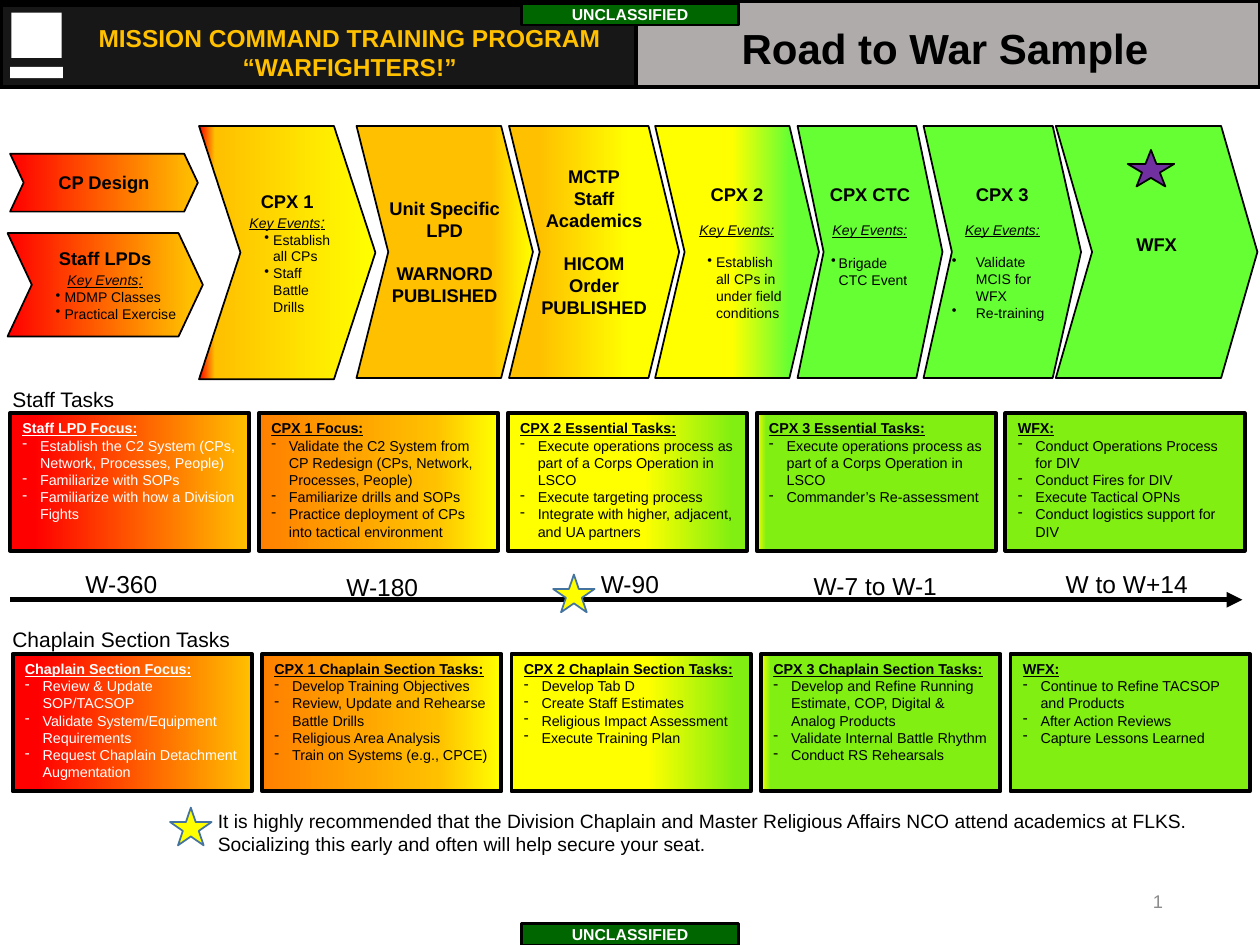
from collections import namedtuple
from dataclasses import dataclass

from lxml import etree
from pptx import Presentation
from pptx import util as u
from pptx.dml.color import RGBColor
from pptx.enum import shapes, text
from pptx.oxml.ns import qn

Box = namedtuple("Box", "x y w h")
Style = namedtuple("Style", "size bold italic underline", defaults=(False, False, False))


@dataclass(frozen=True)
class Theme:
    font: str = "Arial"
    black: str = "000000"
    white: str = "FFFFFF"
    coal: str = "181717"
    silver: str = "AFABAB"
    grey: str = "8C8C8C"
    red: str = "FF0000"
    orange: str = "FF8000"
    amber: str = "FFC000"
    yellow: str = "FFFF00"
    lime: str = "66FF33"
    green: str = "80EF11"
    marking: str = "006600"
    purple: str = "7030A0"
    blue: str = "43739E"
    title: Style = Style(24, True)
    program: Style = Style(14, True)
    mark: Style = Style(9, True)
    head: Style = Style(10.5, True)
    key: Style = Style(8, False, True, True)
    colon: Style = Style(9, False, True, True)
    item: Style = Style(8)
    focus: Style = Style(8.2, True, False, True)
    task: Style = Style(8.2)
    section: Style = Style(12)
    date: Style = Style(14)
    note: Style = Style(11)
    number: Style = Style(10.5)


T = Theme()
S = shapes.MSO_SHAPE
LEFT, CENTER, RIGHT = text.PP_ALIGN.LEFT, text.PP_ALIGN.CENTER, text.PP_ALIGN.RIGHT
TOP, MIDDLE = text.MSO_ANCHOR.TOP, text.MSO_ANCHOR.MIDDLE
COLUMNS = 100
prs = Presentation()
prs.slide_width, prs.slide_height = u.Inches(10), u.Inches(7.5)


def grid(n):
    return round(n * prs.slide_width / COLUMNS)


def within(box, x, y, w, h):
    return Box(box.x + x, box.y + y, w, h)


def paint(sp, stops):
    if len(stops) == 1:
        sp.fill.solid()
        sp.fill.fore_color.rgb = RGBColor.from_string(stops[0][1])
        return
    sp.fill.gradient()
    grad = sp.element.spPr.find(qn("a:gradFill"))
    grad.find(qn("a:lin")).set("ang", "0")
    gs_list = grad.find(qn("a:gsLst"))
    for gs in list(gs_list):
        gs_list.remove(gs)
    for pos, color in stops:
        gs = etree.SubElement(gs_list, qn("a:gs"), pos=str(pos * 1000))
        etree.SubElement(gs, qn("a:srgbClr"), val=color)


def add_shape(s, kind, box, stops=None, line=T.black, width=1):
    sp = s.shapes.add_shape(kind, *map(grid, box))
    sp.shadow.inherit = False
    if stops:
        paint(sp, stops)
    else:
        sp.fill.background()
    if line:
        sp.line.color.rgb = RGBColor.from_string(line)
        sp.line.width = u.Pt(width)
    else:
        sp.line.fill.background()
    return sp


def frame(sp, anchor=TOP, insets=(1, 0.5, 1, 0.5), wrap=True):
    tf = sp.text_frame
    tf.auto_size = text.MSO_AUTO_SIZE.NONE
    tf.word_wrap, tf.vertical_anchor = wrap, anchor
    tf.margin_left, tf.margin_top, tf.margin_right, tf.margin_bottom = map(grid, insets)
    return tf


def write(tf, runs, color=T.black, align=LEFT, bullet=None, indent=(0, 0), before=0):
    p = tf.paragraphs[0]
    if p.runs:
        p = tf.add_paragraph()
    if bullet:
        pPr = p._p.get_or_add_pPr()
        pPr.set("marL", str(grid(indent[0])))
        pPr.set("indent", str(grid(indent[1])))
        etree.SubElement(pPr, qn("a:buChar"), char=bullet)
    p.alignment = align
    p.space_before = u.Pt(before)
    for style, words in runs:
        r = p.add_run()
        r.text = words
        f = r.font
        f.name, f.size, f.color.rgb = T.font, u.Pt(style.size), RGBColor.from_string(color)
        f.bold, f.italic, f.underline = style.bold, style.italic, style.underline


def label(s, box, style, words, wrap=False, **kw):
    tf = frame(s.shapes.add_textbox(*map(grid, box)), wrap=wrap)
    write(tf, [(style, words)], **kw)
    return tf


def header(s, box):
    half = 50.5
    add_shape(s, S.RECTANGLE, within(box, 0.1, 0.3, half, 6.5), [(0, T.coal)], width=2.25)
    add_shape(s, S.RECTANGLE, within(box, half, 0, box.w - half, box.h), [(0, T.silver)], width=2.25)
    add_shape(s, S.RECTANGLE, within(box, 0, 0, half, box.h), width=2.25)
    for part in ((0.8, 5.2, 4.2, 0.9), (0.9, 0.9, 4, 3.6)):
        add_shape(s, S.RECTANGLE, within(box, *part), [(0, T.white)], line=None)
    program = s.shapes.add_textbox(*map(grid, within(box, 5, 0.7, 45.5, 6.7)))
    tf = frame(program, MIDDLE, (0.7, 0.4, 0.7, 0.4))
    for words in ("MISSION COMMAND TRAINING PROGRAM", "“WARFIGHTERS!”"):
        write(tf, [(T.program, words)], T.amber, CENTER)
    title = s.shapes.title
    title.left, title.top, title.width, title.height = map(grid, within(box, 50, 1.4, 50, 4.6))
    write(frame(title, MIDDLE), [(T.title, "Road to War Sample")], align=CENTER)
    title.element.getparent().append(title.element)


def marking(s, box):
    sp = add_shape(s, S.RECTANGLE, box, [(0, T.marking)], width=1.5)
    write(frame(sp, MIDDLE, (0.1,) * 4), [(T.mark, "UNCLASSIFIED")], T.white, CENTER)


def head(words, before=0):
    return "head", [(T.head, words)], before


def key(before=0, colon=T.key):
    return "key", [(T.key, "Key Events"), (colon, ":")], before


def item(words, before=0):
    return "item", [(T.item, words)], before


def phases(s, box):
    small, large = 9.2, 12
    near, mid, far, wide = (2.6, -0.7), (2.5, -0.7), (1.2, -0.6), (1.9, -1.9)
    table = [
        ((15.8, 0, 14, 20.1), 0.235, [(0, T.red), (9, T.amber), (100, T.yellow)], near, 0,
         [head("CPX 1"), key(0, T.colon), item("Establish all CPs"), item("Staff Battle Drills")]),
        ((83.8, 0, 16, 20), 0.18, [(0, T.lime)], near, 1.3, [head("WFX")]),
        ((52, 0, 13, 20), 0.18, [(47, T.yellow), (82, T.lime)], mid, 0,
         [head("CPX 2"), key(small), item("Establish all CPs in under field conditions", small)]),
        ((40.4, 0, 13.5, 20), 0.18, [(17, T.amber), (71, T.yellow)], near, 1.7,
         [head("MCTP"), head("Staff Academics"), head("HICOM Order PUBLISHED", large)]),
        ((28.3, 0, 14, 20), 0.18, [(0, T.amber), (76, T.amber), (100, T.yellow)], near, 0,
         [head("Unit Specific LPD"), head("WARNORD", large), head("PUBLISHED")]),
        ((73.3, 0, 12.5, 20), 0.18, [(0, T.yellow), (2, T.lime)], wide, 0,
         [head("CPX 3"), key(small), item("Validate MCIS for WFX", small), item("Re-training")]),
        ((63.3, 0, 11.5, 20), 0.18, [(0, T.lime)], far, 2.6,
         [head("CPX CTC"), key(small), item("Brigade CTC Event", small)]),
        ((0.6, 8.5, 15.5, 8.2), 0.235, [(0, T.red), (94, T.amber)], near, 0,
         [head("Staff LPDs"), key(0, T.colon), item("MDMP Classes"), item("Practical Exercise")]),
        ((0.8, 2.2, 14.9, 4.6), 0.235, [(0, T.red), (99, T.amber)], near, 0, [head("CP Design")]),
    ]
    for place, point, stops, indent, bottom, lines in table:
        sp = add_shape(s, S.CHEVRON, within(box, *place), stops)
        sp.adjustments[0] = point
        tf = frame(sp, MIDDLE, (0, 0, 0, bottom))
        for kind, runs, before in lines:
            if kind == "item":
                write(tf, runs, bullet="•", indent=indent, before=before)
            else:
                write(tf, runs, align=CENTER, before=before)
    add_shape(s, S.STAR_5_POINT, within(box, 89.5, 1.9, 3.7, 2.9), [(0, T.purple)])


def task_row(s, box, caption, cards):
    label(s, Box(0, box.y - 2.65, 20, 3), T.section, caption, wrap=True)
    fills = [[(10, T.red), (100, T.amber)], [(0, T.orange), (73, T.amber), (100, T.yellow)],
             [(57, T.yellow), (94, T.green)], [(0, T.yellow), (4, T.green)], [(0, T.green)]]
    width = 19
    pitch = (box.w - width) / (len(cards) - 1)
    for i, ((focus, *tasks), stops) in enumerate(zip(cards, fills)):
        sp = add_shape(s, S.RECTANGLE, within(box, i * pitch, 0, width, box.h), stops, width=2.25)
        tf = frame(sp)
        color = T.black if i else T.white
        write(tf, [(T.focus, focus)], color)
        for words in tasks:
            write(tf, [(T.task, words)], color, bullet="-", indent=(1.4, -1.4))


def timeline(s, box):
    y = box.y + 2.9
    ends = [grid(n) for n in (box.x, y, box.x + box.w, y)]
    c = s.shapes.add_connector(shapes.MSO_CONNECTOR.STRAIGHT, *ends)
    c.line.color.rgb, c.line.width = RGBColor.from_string(T.black), u.Pt(3)
    spPr = c.element.spPr
    etree.SubElement(spPr.find(qn("a:ln")), qn("a:tailEnd"), type="triangle")
    etree.SubElement(spPr, qn("a:effectLst"))
    for x, dy, w, words in ((5, 0, 7.8, "W-360"), (25.7, 0.2, 7.8, "W-180"), (45.9, 0, 6.7, "W-90"),
                            (62.8, 0.1, 11.9, "W-7 to W-1"), (82.8, 0, 11.8, "W to W+14")):
        label(s, within(box, x, dy, w, 3.4), T.date, words)
    star(s, within(box, 43.1, 0.9, 3.3, 3))


def star(s, box):
    add_shape(s, S.STAR_5_POINT, box, [(0, T.yellow)], T.blue)


def note(s, box):
    star(s, within(box, 0, 0.4, 3.3, 3))
    label(s, within(box, 2.8, 0, box.w - 2.8, box.h), T.note,
          "It is highly recommended that the Division Chaplain and Master Religious Affairs NCO attend "
          "academics at FLKS. Socializing this early and often will help secure your seat.", wrap=True)


STAFF = [
    ("Staff LPD Focus:", "Establish the C2 System (CPs, Network, Processes, People)",
     "Familiarize with SOPs", "Familiarize with how a Division Fights"),
    ("CPX 1 Focus:", "Validate the C2 System from CP Redesign (CPs, Network, Processes, People)",
     "Familiarize drills and SOPs", "Practice deployment of CPs into tactical environment"),
    ("CPX 2 Essential Tasks:", "Execute operations process as part of a Corps Operation in LSCO",
     "Execute targeting process", "Integrate with higher, adjacent, and UA partners"),
    ("CPX 3 Essential Tasks:", "Execute operations process as part of a Corps Operation in LSCO",
     "Commander’s Re-assessment"),
    ("WFX:", "Conduct Operations Process for DIV", "Conduct Fires for DIV", "Execute Tactical OPNs",
     "Conduct logistics support for DIV"),
]
CHAPLAIN = [
    ("Chaplain Section Focus:", "Review & Update SOP/TACSOP", "Validate System/Equipment Requirements",
     "Request Chaplain Detachment Augmentation"),
    ("CPX 1 Chaplain Section Tasks:", "Develop Training Objectives",
     "Review, Update and Rehearse Battle Drills", "Religious Area Analysis", "Train on Systems (e.g., CPCE)"),
    ("CPX 2 Chaplain Section Tasks:", "Develop Tab D", "Create Staff Estimates",
     "Religious Impact Assessment", "Execute Training Plan"),
    ("CPX 3 Chaplain Section Tasks:", "Develop and Refine Running Estimate, COP, Digital & Analog Products",
     "Validate Internal Battle Rhythm", "Conduct RS Rehearsals"),
    ("WFX:", "Continue to Refine TACSOP and Products", "After Action Reviews", "Capture Lessons Learned"),
]


def main():
    s = prs.slides.add_slide(prs.slide_layouts[5])
    header(s, Box(0, 0.1, 100, 6.8))
    for y in (0.3, 73.3):
        marking(s, Box(41.4, y, 17.2, 1.7))
    phases(s, Box(0, 10, 100, 20))
    task_row(s, Box(0.8, 32.8, 98, 10.9), "Staff Tasks", STAFF)
    timeline(s, Box(0.8, 44.7, 97.8, 4))
    task_row(s, Box(1, 51.9, 98.2, 10.9), "Chaplain Section Tasks", CHAPLAIN)
    note(s, Box(13.5, 63.7, 85.7, 4.7))
    tf = label(s, Box(70.8, 69.5, 22.5, 4), T.number, "1", wrap=True, color=T.grey, align=RIGHT)
    tf.vertical_anchor = MIDDLE
    prs.save("out.pptx")


if __name__ == "__main__":
    main()
